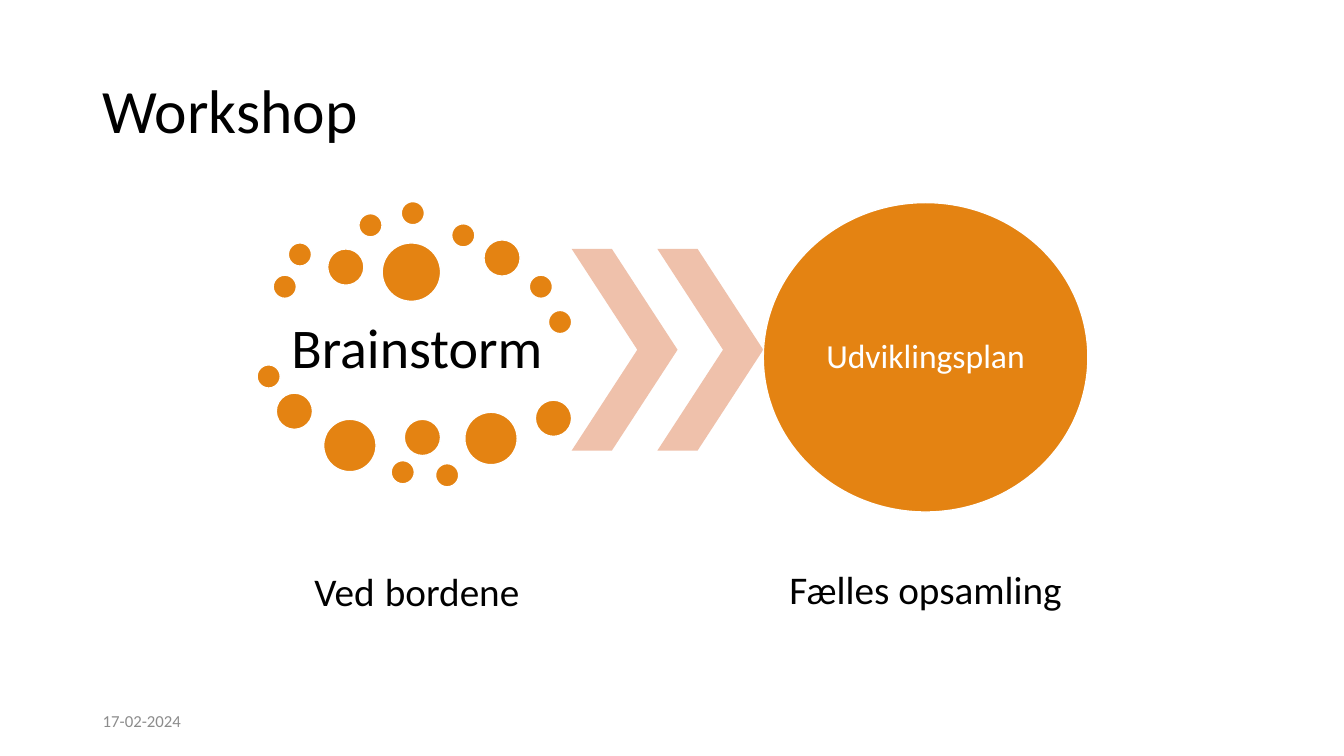
from dataclasses import dataclass

from pptx import Presentation
from pptx.dml.color import RGBColor
from pptx.enum.shapes import MSO_SHAPE as SHAPE
from pptx.enum.text import MSO_ANCHOR as ANCHOR, PP_ALIGN as ALIGN
from pptx.util import Inches, Pt


@dataclass(frozen=True)
class Theme:
    font: str = "Calibri"
    orange: str = "E48312"
    peach: str = "EFC1AB"
    black: str = "000000"
    white: str = "FFFFFF"
    grey: str = "8C8C8C"
    title: int = 44
    heading: int = 40
    space: int = 32
    caption: int = 28
    label: int = 24
    date: int = 12


theme = Theme()


def add_text(sp, *parts, size, color=theme.black, align=ALIGN.CENTER,
             inset=0.04, spacing=0.9):
    """Write one paragraph; a part is a string or a (string, size) pair."""
    tf = sp.text_frame
    tf.word_wrap = True
    tf.vertical_anchor = ANCHOR.MIDDLE
    if inset is not None:
        tf.margin_left = tf.margin_right = Inches(inset)
        tf.margin_top = tf.margin_bottom = Inches(inset)
    p = tf.paragraphs[0]
    p.alignment = align
    p.line_spacing = spacing
    for part in parts:
        text, pt = part if isinstance(part, tuple) else (part, size)
        r = p.add_run()
        r.text = text
        r.font.name = theme.font
        r.font.size = Pt(pt)
        r.font.color.rgb = RGBColor.from_string(color)


def add_filled(kind, left, top, width, height, fill, line=None):
    sp = s.shapes.add_shape(kind, Inches(left), Inches(top), Inches(width), Inches(height))
    sp.shadow.inherit = False
    sp.fill.solid()
    sp.fill.fore_color.rgb = RGBColor.from_string(fill)
    if line:
        sp.line.color.rgb = RGBColor.from_string(line)
        sp.line.width = Pt(1)
    else:
        sp.line.fill.background()
    return sp


prs = Presentation()
prs.slide_width, prs.slide_height = Inches(13.33), Inches(7.5)
s = prs.slides.add_slide(prs.slide_layouts[6])

# Title, headings and date
left_aligned = dict(align=ALIGN.LEFT, inset=None)
texts = [
    ((0.92, 0.4, 11.5, 1.45), ["Workshop"], dict(size=theme.title, **left_aligned)),
    ((2.71, 3.01, 2.85, 0.94), ["Brainstorm"], dict(size=theme.heading, inset=0.06)),
    ((2.71, 4.99, 2.85, 1.76), ["Ved", (" ", theme.space), "bordene"],
     dict(size=theme.caption)),
    ((7.75, 4.99, 2.86, 1.76), ["Fælles opsamling"], dict(size=theme.caption)),
    ((0.92, 6.95, 3, 0.4), ["17-02-2024"],
     dict(size=theme.date, color=theme.grey, spacing=1.0, **left_aligned)),
]
for box, parts, style in texts:
    add_text(s.shapes.add_textbox(*map(Inches, box)), *parts, **style)

# Idea dots around the brainstorm, grouped by diameter
idea_dots = {
    0.23: [(2.71, 2.73), (2.86, 2.41), (3.56, 2.12), (3.98, 2), (4.48, 2.22), (5.25, 2.73),
           (5.44, 3.08), (2.55, 3.62), (3.88, 4.57), (4.32, 4.6)],
    0.36: [(3.25, 2.47), (4.8, 2.38), (2.74, 3.9), (4.01, 4.16), (5.31, 3.97)],
    0.52: [(3.21, 4.16), (4.61, 4.09)],
    0.58: [(3.79, 2.41)],
}
for diameter, corners in idea_dots.items():
    for left, top in corners:
        add_filled(SHAPE.OVAL, left, top, diameter, diameter, theme.orange, theme.white)

# Chevrons leading to the plan
for left in (5.67, 6.52):
    chevron = add_filled(SHAPE.CHEVRON, left, 2.47, 1.05, 2, theme.peach)
    chevron.adjustments[0] = 0.62

plan = add_filled(SHAPE.OVAL, 7.57, 2.01, 3.22, 3.07, theme.orange, theme.white)
add_text(plan, "Udviklingsplan", size=theme.label, color=theme.white, inset=0)

prs.save("out.pptx")
